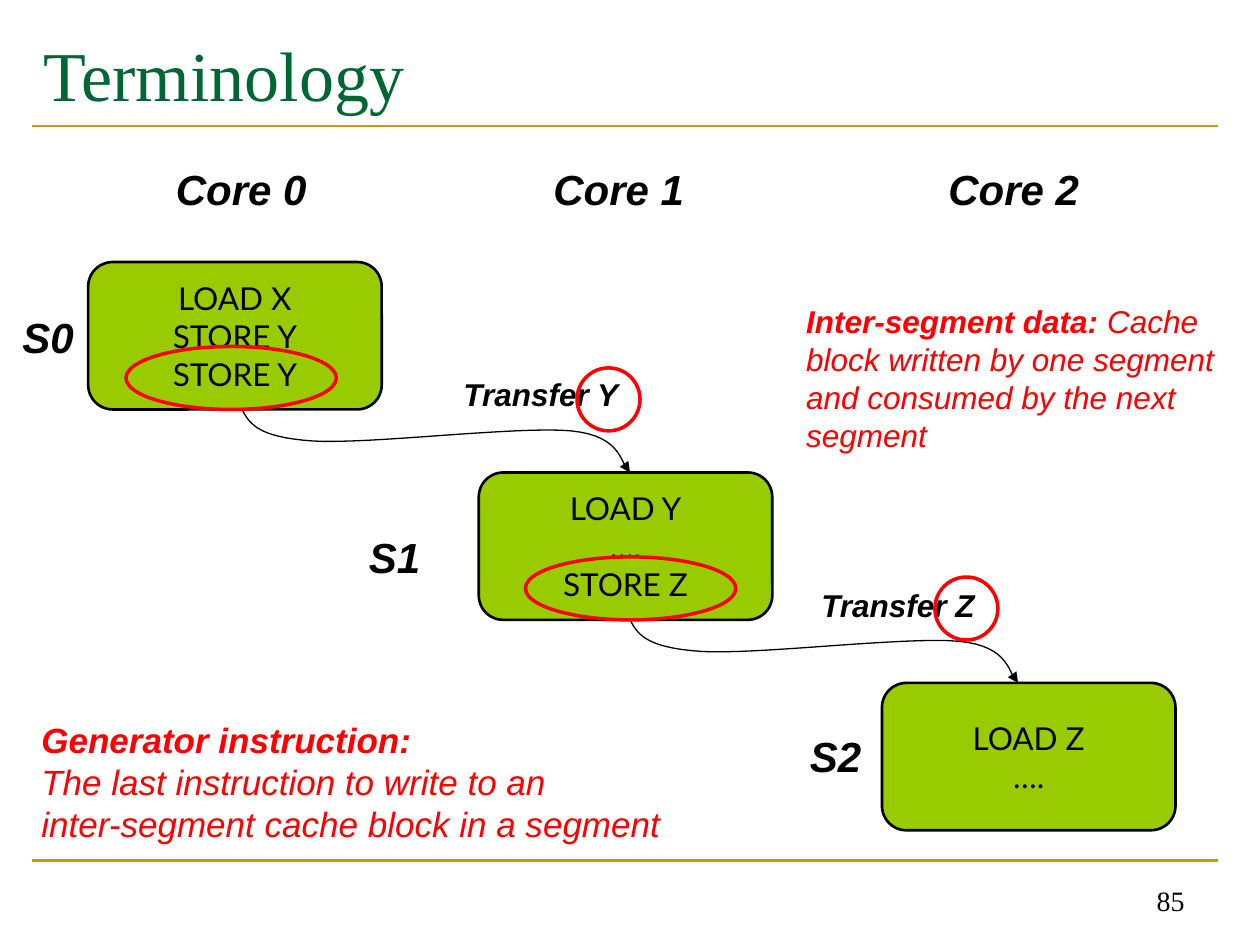
"""Build the slide that explains the terminology of segments running on three cores."""
from lxml.etree import SubElement
from pptx import Presentation
from pptx.dml.color import RGBColor
from pptx.enum.shapes import MSO_CONNECTOR, MSO_SHAPE
from pptx.enum.text import MSO_ANCHOR as Anchor, PP_ALIGN as Align
from pptx.oxml.ns import qn
from pptx.util import Inches, Pt

BLACK, RED, GREEN, LIME, GOLD = "000000", "FF0000", "006633", "99CC00", "CC9900"
SERIF = "Times New Roman"

RULES = [1, 6.83]
CORES = [("Core 0", 1.25, 1.33), ("Core 1", 4.25, 1.32), ("Core 2", 7.42, 1.25)]
SEGMENTS = [
    (["LOAD X", "STORE Y", "STORE Y"], 0.7, 2.08),
    (["LOAD Y", "….", "STORE Z"], 3.8, 3.75),
    (["LOAD Z", "…."], 7, 5.42),
]
SEGMENT_SIZE = (2.33, 1.17)
LABELS = [("S0", 0.08, 2.42), ("S1", 2.83, 4.17), ("S2", 6.33, 5.75)]
TRANSFERS = [("Transfer Y", 3.58, 2.93), ("Transfer Z", 6.42, 4.6)]
RINGS = [
    (4.58, 2.92, 0.5, 0.5),
    (7.42, 4.58, 0.5, 0.5),
    (1, 2.75, 1.67, 0.5),
    (4.17, 4.42, 1.67, 0.5),
]
NOTES = [
    ("Inter-segment data:",
     " Cache block written by one segment and consumed by the next segment",
     (6.3, 2.35, 3.47, 1.3), 18),
    ("Generator instruction:\v",
     "The last instruction to write to an\vinter-segment cache block in a segment",
     (0.23, 5.65, 5.35, 1.11), 20),
]
ARROW_STARTS = [(1.92, 3.25), (5, 4.92)]
ARROW_CURVES = [
    [(0, 0), (0.06, 0.11), (0.12, 0.22), (0.56, 0.25)],
    [(0.56, 0.25), (0.99, 0.28), (2.19, 0.13), (2.61, 0.17)],
    [(2.61, 0.17), (3.03, 0.21), (3, 0.44), (3.08, 0.5)],
]
CURVE_STEPS = 16


def color(value):
    return RGBColor.from_string(value)


def write(frame, paragraphs, size, font="Arial", ink=BLACK, bold=False, italic=False,
          align=Align.LEFT, anchor=Anchor.TOP, wrap=True):
    frame.word_wrap = wrap
    frame.vertical_anchor = anchor
    for index, spans in enumerate(paragraphs):
        para = frame.add_paragraph() if index else frame.paragraphs[0]
        para.alignment = align
        for text, heavy in spans:
            for row, line in enumerate(text.split("\v")):
                if row:
                    para.add_line_break()
                if line:
                    span = para.add_run()
                    span.text = line
                    span.font.name = font
                    span.font.size = Pt(size)
                    span.font.bold = bold or heavy
                    span.font.italic = italic
                    span.font.color.rgb = color(ink)


def add_text(page, place, spans, size, **style):
    box = page.shapes.add_textbox(*map(Inches, place))
    write(box.text_frame, [spans], size, **style)


def outline(shape, ink, width, fill=None):
    shape.shadow.inherit = False
    if fill:
        shape.fill.solid()
        shape.fill.fore_color.rgb = color(fill)
    else:
        shape.fill.background()
    shape.line.color.rgb = color(ink)
    shape.line.width = Pt(width)


def add_rule(page, y):
    rule = page.shapes.add_connector(
        MSO_CONNECTOR.STRAIGHT, Inches(0.25), Inches(y), Inches(9.67), Inches(y))
    rule.line.color.rgb = color(GOLD)
    rule.line.width = Pt(1.5)
    SubElement(rule._element.spPr, qn("a:effectLst"))


def curve_point(curve, t):
    weights = ((1 - t) ** 3, 3 * t * (1 - t) ** 2, 3 * t ** 2 * (1 - t), t ** 3)
    return [sum(w * p[axis] for w, p in zip(weights, curve)) for axis in (0, 1)]


def add_arrow(page, left, top):
    points = [curve_point(curve, step / CURVE_STEPS)
              for curve in ARROW_CURVES for step in range(1, CURVE_STEPS + 1)]
    builder = page.shapes.build_freeform(Inches(left), Inches(top))
    builder.add_line_segments(
        [(Inches(left + x), Inches(top + y)) for x, y in points], close=False)
    arrow = builder.convert_to_shape()
    outline(arrow, BLACK, 0.75)
    SubElement(arrow.line._get_or_add_ln(), qn("a:tailEnd"), type="triangle")


def main():
    deck = Presentation()
    deck.slide_width, deck.slide_height = Inches(10), Inches(7.5)
    page = deck.slides.add_slide(deck.slide_layouts[6])

    for y in RULES:
        add_rule(page, y)
    add_text(page, (7.17, 6.83, 2.33, 0.5), [("85", False)], 16, font=SERIF,
             align=Align.RIGHT, anchor=Anchor.BOTTOM)
    add_text(page, (0.25, 0.17, 9.42, 0.83), [("Terminology", False)], 40, font=SERIF,
             ink=GREEN, anchor=Anchor.MIDDLE)

    for lines, left, top in SEGMENTS:
        segment = page.shapes.add_shape(
            MSO_SHAPE.ROUNDED_RECTANGLE, *map(Inches, (left, top, *SEGMENT_SIZE)))
        outline(segment, BLACK, 1.5, LIME)
        write(segment.text_frame, [[(line, False)] for line in lines], 18, font="Lato",
              align=Align.CENTER, anchor=Anchor.MIDDLE, wrap=False)
    for start in ARROW_STARTS:
        add_arrow(page, *start)

    for text, left, top in TRANSFERS:
        add_text(page, (left, top, 1.83, 0.4), [(text, True)], 18, italic=True)
    for text, left, top in LABELS:
        add_text(page, (left, top, 0.67, 0.5), [(text, True)], 24, italic=True)
    for term, meaning, place, size in NOTES:
        add_text(page, place, [(term, True), (meaning, False)], size, ink=RED, italic=True)
    for place in RINGS:
        ring = page.shapes.add_shape(MSO_SHAPE.OVAL, *map(Inches, place))
        outline(ring, RED, 2)
    for text, left, width in CORES:
        add_text(page, (left, 1.25, width, 0.51), [(text, True)], 24, italic=True,
                 align=Align.CENTER)

    deck.save("out.pptx")


if __name__ == "__main__":
    main()
